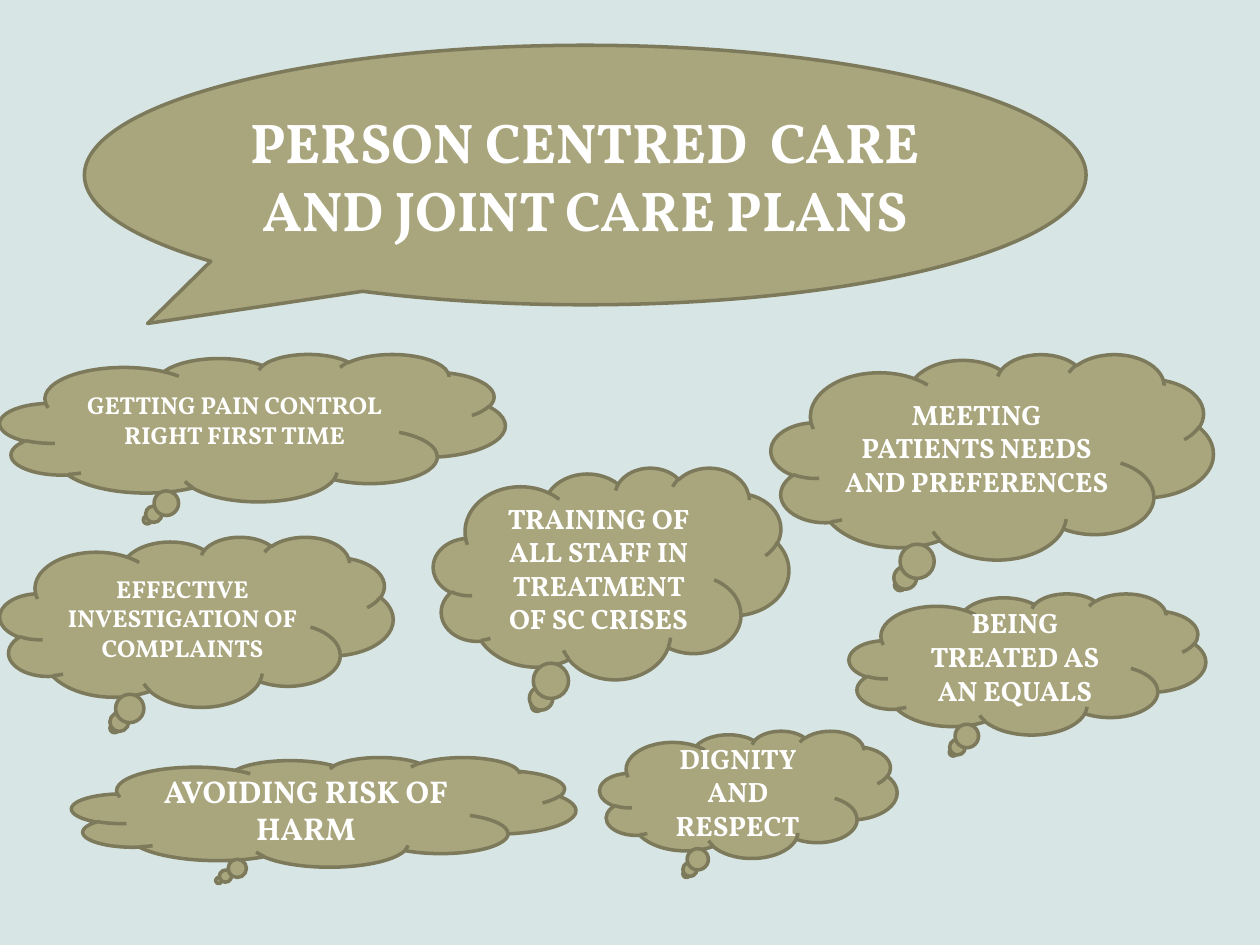
from dataclasses import dataclass

from pptx import Presentation
from pptx.dml.color import RGBColor
from pptx.enum import shapes, text
from pptx.util import Inches, Pt


@dataclass(frozen=True)
class Theme:
    background: RGBColor = RGBColor(0xD7, 0xE5, 0xE5)
    fill: RGBColor = RGBColor(0xA9, 0xA5, 0x7C)
    outline: RGBColor = RGBColor(0x7D, 0x7A, 0x5C)
    text: RGBColor = RGBColor(0xFF, 0xFF, 0xFF)
    font: str = "Vollkorn"
    outline_width: int = Pt(2)
    title: int = Pt(32)
    large: int = Pt(18)
    medium: int = Pt(16)
    small: int = Pt(14)


THEME = Theme()
INSET = 0.05
RAISED_INSET = 0.12  # a deeper bottom inset lifts the centred text a little

# wording, (left, top, width, height), type size, bottom inset
CLOUDS = [
    ("MEETING PATIENTS NEEDS AND PREFERENCES",
     (6.12, 2.81, 3.51, 1.63), THEME.medium, RAISED_INSET),
    ("GETTING PAIN CONTROL RIGHT FIRST TIME",
     (0, 2.81, 4.01, 1.17), THEME.small, RAISED_INSET),
    ("TRAINING OF ALL STAFF IN TREATMENT OF SC CRISES",
     (3.44, 3.71, 2.82, 1.68), THEME.medium, INSET),
    ("EFFECTIVE INVESTIGATION OF COMPLAINTS",
     (0, 4.26, 3.12, 1.35), THEME.small, INSET),
    ("BEING TREATED AS AN EQUALS",
     (6.74, 4.71, 2.83, 1.12), THEME.medium, RAISED_INSET),
    ("DIGNITY AND RESPECT",
     (4.76, 5.8, 2.36, 1.01), THEME.medium, INSET),
    ("AVOIDING RISK OF HARM",
     (0.57, 6.01, 4, 0.87), THEME.large, INSET),
]


def set_attributes(target, values):
    for name, value in values.items():
        setattr(target, name, value)


def add_callout(slide, kind, wording, box, size, bottom_inset=INSET):
    shape = slide.shapes.add_shape(kind, *map(Inches, box))
    shape.shadow.inherit = False
    shape.fill.solid()
    shape.fill.fore_color.rgb = THEME.fill
    shape.line.color.rgb = THEME.outline
    shape.line.width = THEME.outline_width

    frame = shape.text_frame
    set_attributes(frame, {
        "word_wrap": True,
        "vertical_anchor": text.MSO_ANCHOR.MIDDLE,
        "margin_bottom": Inches(bottom_inset),
    })
    paragraph = frame.paragraphs[0]
    paragraph.alignment = text.PP_ALIGN.CENTER
    run = paragraph.add_run()
    run.text = wording
    set_attributes(run.font, {"name": THEME.font, "size": size, "bold": True})
    run.font.color.rgb = THEME.text
    return shape


def add_title(slide):
    bubble = add_callout(
        slide, shapes.MSO_SHAPE.OVAL_CALLOUT,
        "PERSON CENTRED  CARE AND JOINT CARE PLANS",
        (0.67, 0.36, 7.95, 2.06), THEME.title)
    bubble.adjustments[0] = -0.437
    bubble.adjustments[1] = 0.572


def main():
    presentation = Presentation()
    presentation.slide_width = Inches(10)
    presentation.slide_height = Inches(7.5)
    slide = presentation.slides.add_slide(presentation.slide_layouts[6])
    slide.background.fill.solid()
    slide.background.fill.fore_color.rgb = THEME.background

    add_title(slide)
    for wording, box, size, bottom_inset in CLOUDS:
        add_callout(slide, shapes.MSO_SHAPE.CLOUD_CALLOUT,
                    wording, box, size, bottom_inset)
    presentation.save("out.pptx")


if __name__ == "__main__":
    main()
